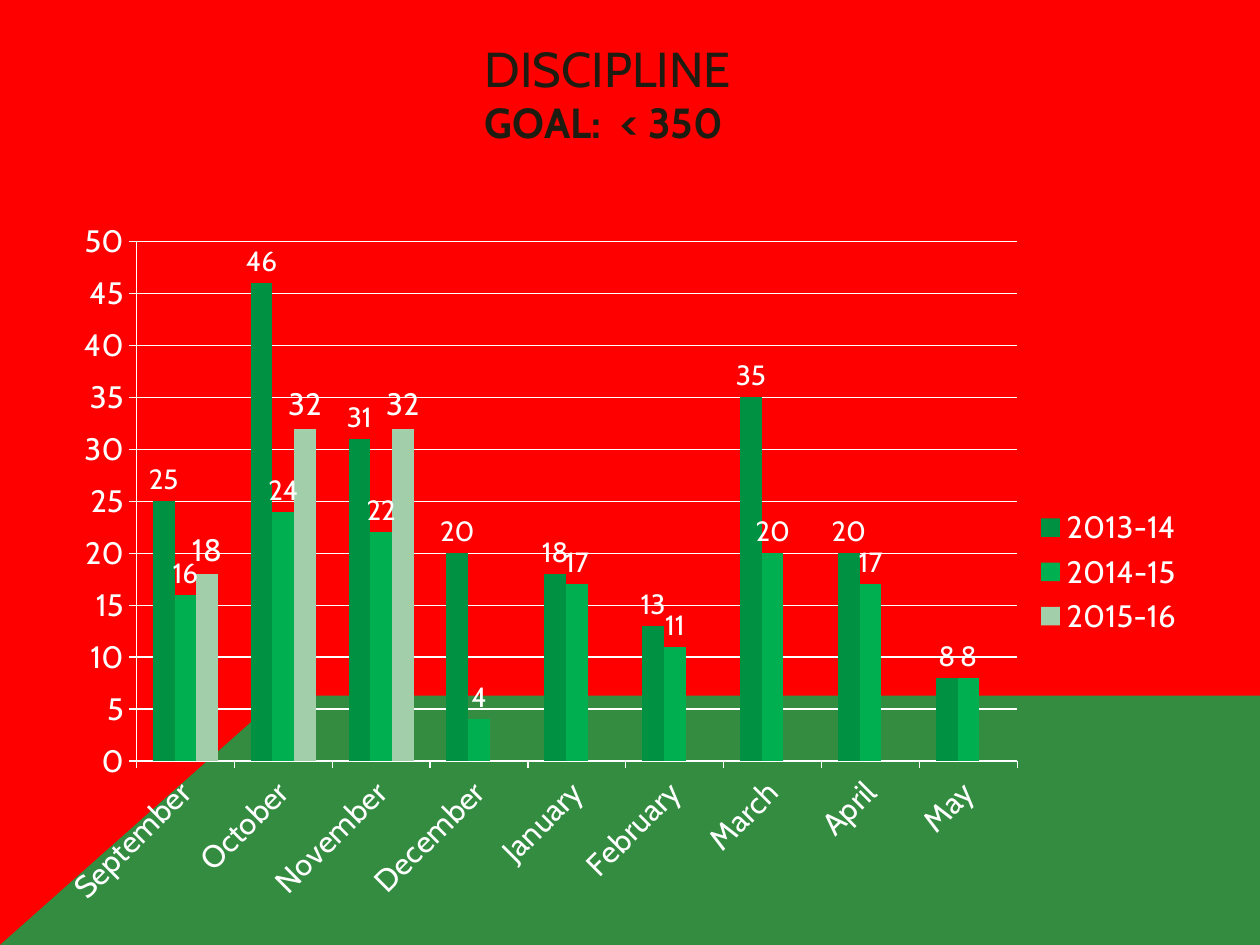
from lxml.etree import SubElement
from pptx import Presentation
from pptx.chart.data import CategoryChartData
from pptx.dml.color import RGBColor
from pptx.enum.chart import XL_CHART_TYPE, XL_LABEL_POSITION, XL_LEGEND_POSITION, XL_TICK_MARK
from pptx.enum.text import MSO_ANCHOR
from pptx.oxml import parse_xml
from pptx.oxml.ns import nsdecls, qn
from pptx.util import Inches, Pt

COLORS = {"red": "FF0000", "green": "00B050", "dark_green": "009242",
          "pale_green": "A2CFAA", "ink": "1E1C11", "white": "FFFFFF"}
FONT = "Cabin"
MONTHS = ["September", "October", "November", "December", "January",
          "February", "March", "April", "May"]
# name, values, fill, label size
YEARS = [
    ("2013-14", [25, 46, 31, 20, 18, 13, 35, 20, 8], "dark_green", 15.9),
    ("2014-15", [16, 24, 22, 4, 17, 11, 20, 17, 8], "green", 15.9),
    ("2015-16", [18, 32, 32] + [None] * 6, "pale_green", 17.7),
]


class SlideBuilder:
    def __init__(self, slide):
        self.slide = slide

    def color(self, name):
        return RGBColor.from_string(COLORS[name])

    def style_font(self, font, size, color, bold=False):
        font.name, font.size, font.bold = FONT, Pt(size), bold
        font.color.rgb = self.color(color)

    def background(self, color):
        fill = self.slide.background.fill
        fill.solid()
        fill.fore_color.rgb = self.color(color)

    def outline(self, points, color, opacity):
        corners = [(Inches(x), Inches(y)) for x, y in points]
        builder = self.slide.shapes.build_freeform(*corners[0], scale=1.0)
        builder.add_line_segments(corners[1:], close=True)
        sp = builder.convert_to_shape()
        sp.shadow.inherit = False
        sp.line.fill.background()
        sp.fill.solid()
        sp.fill.fore_color.rgb = self.color(color)
        rgb = sp.fill._xPr.find(f".//{qn('a:srgbClr')}")
        SubElement(rgb, qn("a:alpha"), val=str(opacity * 1000))

    def title(self, box, lines):
        """Write (text, size, bold) lines into one paragraph with line breaks."""
        tf = self.slide.shapes.add_textbox(*map(Inches, box)).text_frame
        tf.word_wrap = True
        tf.vertical_anchor = MSO_ANCHOR.MIDDLE
        p = tf.paragraphs[0]
        p.text = "\v".join(text for text, _, _ in lines)
        for r, (_, size, bold) in zip(p.runs, lines):
            self.style_font(r.font, size, "ink", bold)

    def column_chart(self, box, categories, series, plot):
        data = CategoryChartData()
        data.categories = categories
        for name, values, _, _ in series:
            data.add_series(name, values)
        chart = self.slide.shapes.add_chart(
            XL_CHART_TYPE.COLUMN_CLUSTERED, *map(Inches, box), data).chart
        chart.has_title = False
        self.style_font(chart.font, 17.7, "white")
        chart.has_legend = True
        chart.legend.position = XL_LEGEND_POSITION.RIGHT
        chart.legend.include_in_layout = False
        columns = chart.plots[0]
        columns.vary_by_categories = False
        columns.gap_width, columns.overlap = 150, 0
        for column, (_, _, color, size) in zip(columns.series, series):
            column.format.fill.solid()
            column.format.fill.fore_color.rgb = self.color(color)
            labels = column.data_labels
            labels.show_value = True
            labels.position = XL_LABEL_POSITION.OUTSIDE_END
            self.style_font(labels.font, size, "white")
        self.axes(chart)
        self.place_plot(chart, plot)

    def axes(self, chart):
        months, counts = chart.category_axis, chart.value_axis
        counts.minimum_scale, counts.maximum_scale, counts.major_unit = 0, 50, 5
        counts.has_major_gridlines = True
        for axis in (months, counts):
            axis.major_tick_mark = XL_TICK_MARK.OUTSIDE
            self.style_font(axis.tick_labels.font, 17.7, "white")
        for line in (months.format.line, counts.format.line,
                     counts.major_gridlines.format.line):
            line.color.rgb = self.color("white")
            line.width = Pt(0.75)
        months._element.find(f".//{qn('a:bodyPr')}").set("rot", "-2700000")

    def place_plot(self, chart, plot):
        """Fix the inner plot area, given as fractions of the chart."""
        sizes = "".join(f'<c:{key} val="{value}"/>' for key, value in zip("xywh", plot))
        layout = parse_xml(
            f'<c:layout {nsdecls("c")}><c:manualLayout><c:layoutTarget val="inner"/>'
            f'<c:xMode val="edge"/><c:yMode val="edge"/>{sizes}'
            '</c:manualLayout></c:layout>')
        area = chart._chartSpace.chart.plotArea
        for old in area.findall(qn("c:layout")):
            area.remove(old)
        area.insert(0, layout)


def main():
    prs = Presentation()
    prs.slide_width, prs.slide_height = Inches(10), Inches(7.5)
    s = SlideBuilder(prs.slides.add_slide(prs.slide_layouts[6]))
    s.background("red")
    s.outline([(0, 7.5), (2.23, 5.52), (10, 5.52), (10, 7.5)], "green", 80)
    s.title((3.75, 0.11, 3.08, 1.25),
            [("DISCIPLINE", 28, False), ("GOAL:  < 350", 24, True)])
    s.column_chart((0.42, 1.75, 9.08, 5.58), MONTHS, YEARS, (0.073, 0.03, 0.77, 0.739))
    prs.save("out.pptx")


if __name__ == "__main__":
    main()
